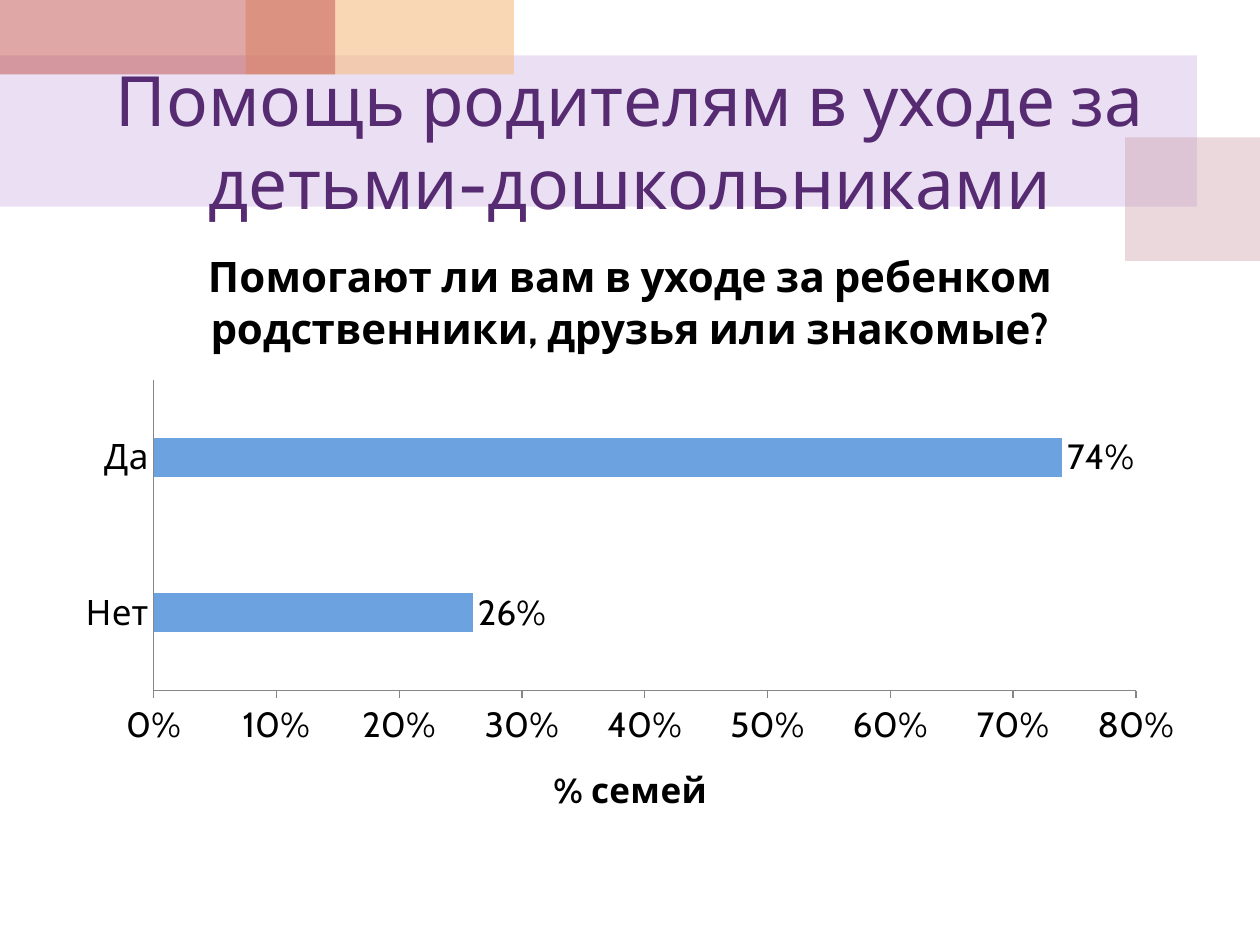
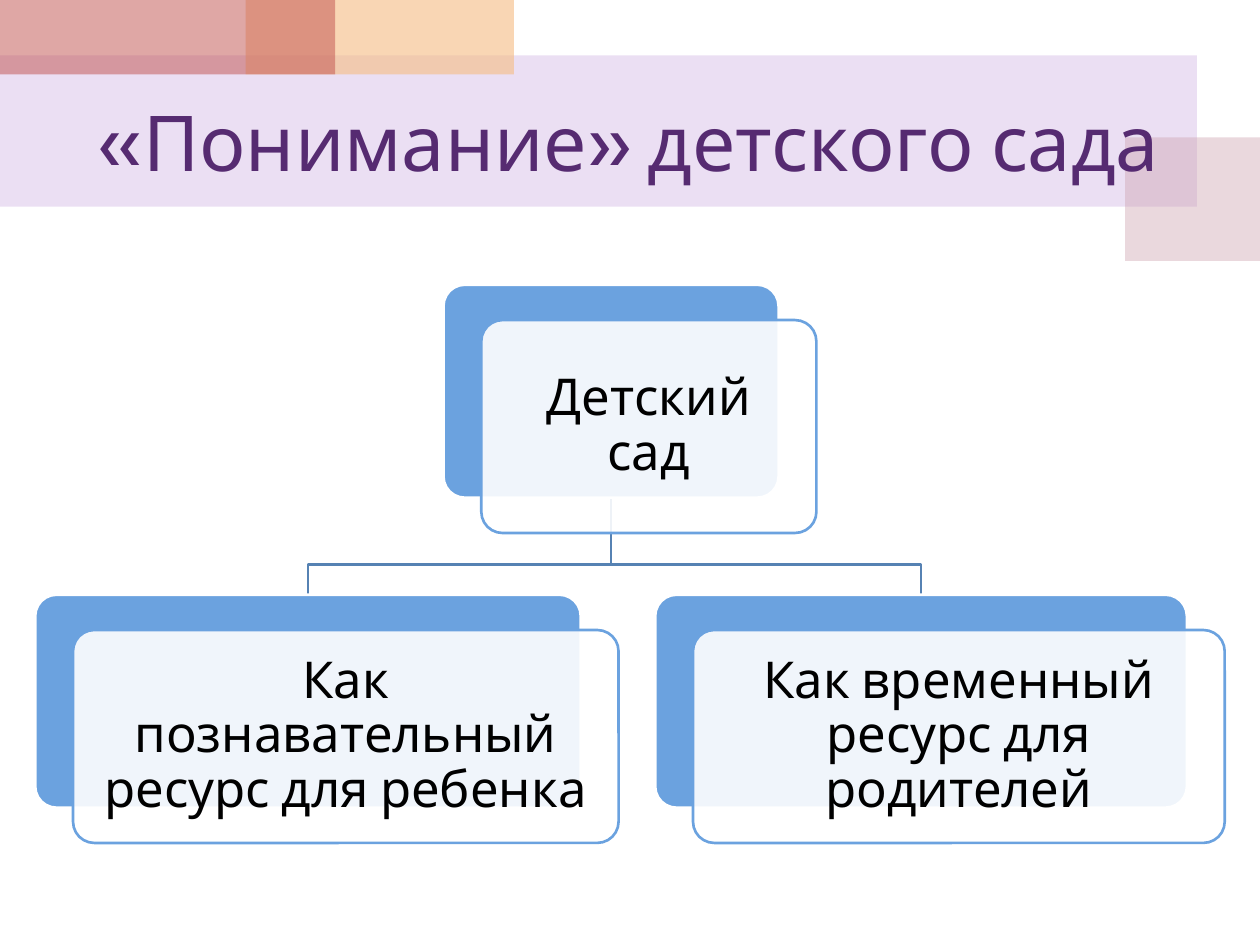
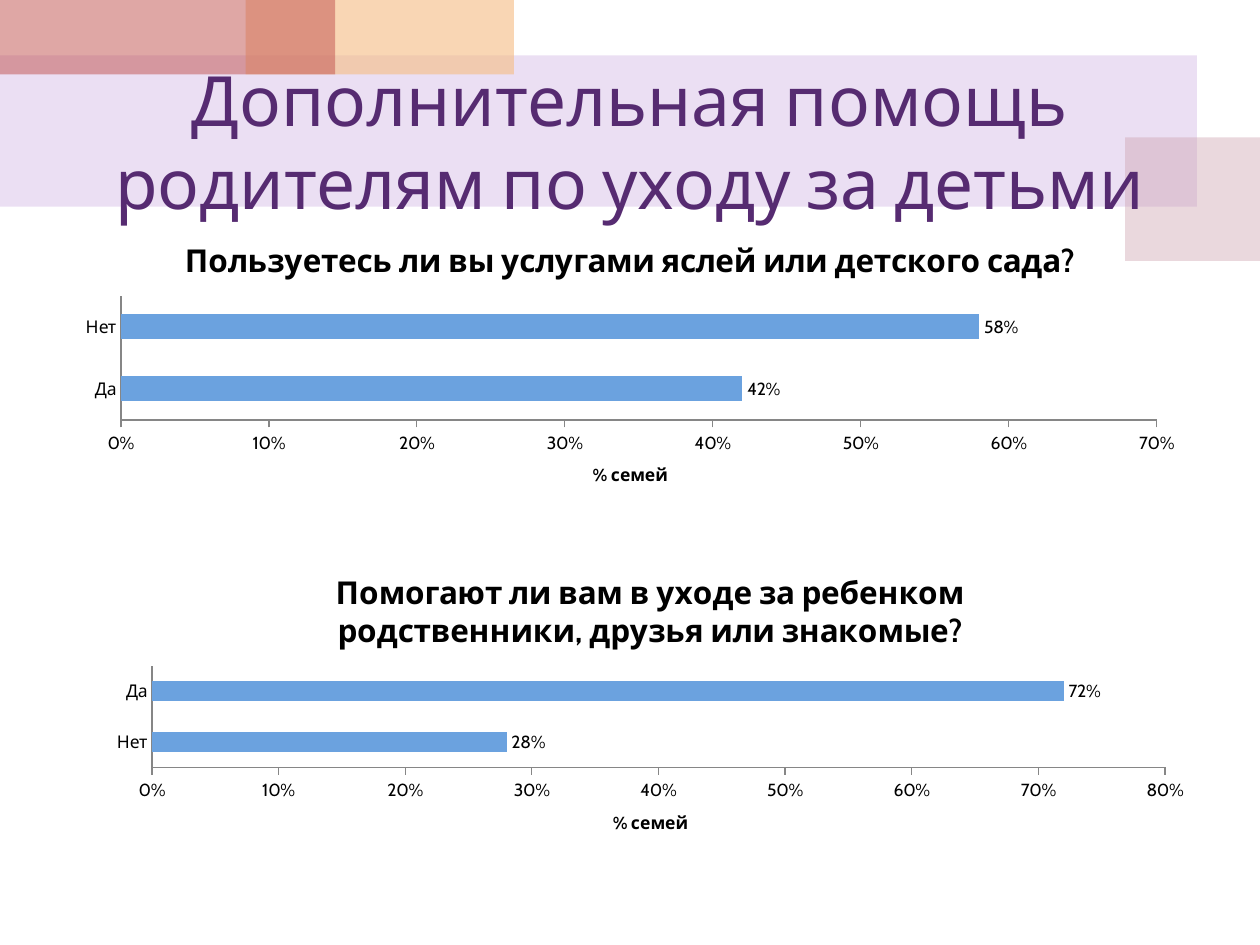
from dataclasses import dataclass

from lxml import etree
from pptx import Presentation, util as u
from pptx.chart.data import CategoryChartData
from pptx.dml.color import RGBColor
from pptx.enum import chart as ch, shapes, text
from pptx.oxml.ns import qn


@dataclass(frozen=True)
class Theme:
    font: str = "Cabin"
    title: str = "562B71"
    ink: str = "000000"
    white: str = "FFFFFF"
    blue: str = "6BA2DF"
    link: str = "5682B3"
    axis: str = "868686"
    lilac: str = "BF98D8"
    rose: str = "CC9EAC"
    peach: str = "F5BC83"
    red: str = "C0504D"
    title_pt: float = 44
    long_title_pt: float = 39.6
    node_pt: float = 29
    line_pt: float = 1.5


T = Theme()


def add_box(s, kind, at, fill, alpha=100, line=None):
    """Add a filled shape; alpha is its opacity in percent."""
    sp = s.shapes.add_shape(kind, *map(u.Inches, at))
    sp.shadow.inherit = False
    sp.fill.solid()
    sp.fill.fore_color.rgb = RGBColor.from_string(fill)
    if alpha < 100:
        clr = sp._element.spPr.find(qn("a:solidFill"))[0]
        etree.SubElement(clr, qn("a:alpha"), val=str(alpha * 1000))
    if line:
        sp.line.color.rgb = RGBColor.from_string(line)
        sp.line.width = u.Pt(T.line_pt)
    else:
        sp.line.fill.background()
    return sp


def write(tf, words, size, color=T.ink, bold=False):
    tf.word_wrap = True
    p = tf.paragraphs[0]
    p.alignment = text.PP_ALIGN.CENTER
    r = p.add_run()
    r.text = words
    for name, value in {"name": T.font, "size": u.Pt(size), "bold": bold}.items():
        setattr(r.font, name, value)
    r.font.color.rgb = RGBColor.from_string(color)
    return p


prs = Presentation()
prs.slide_width, prs.slide_height = u.Inches(10), u.Inches(7.5)

# Bands and titles shared by every slide
bands = [
    ((0, 0.44, 9.5, 1.2), T.lilac, 30),
    ((8.93, 1.09, 1.07, 0.98), T.rose, 40),
    ((1.95, 0, 2.13, 0.59), T.peach, 60),
    ((0, 0, 2.66, 0.59), T.red, 50),
]
titles = [
    ("Помощь родителям в уходе за детьми-дошкольниками", T.long_title_pt),
    ("«Понимание» детского сада", T.title_pt),
    ("Дополнительная помощь родителям по уходу за детьми", T.long_title_pt),
]
for words, size in titles:
    s = prs.slides.add_slide(prs.slide_layouts[6])
    for at, fill, alpha in bands:
        add_box(s, shapes.MSO_SHAPE.RECTANGLE, at, fill, alpha)
    tf = s.shapes.add_textbox(*map(u.Inches, (0.5, 0.59, 9, 1.05))).text_frame
    tf.vertical_anchor = text.MSO_ANCHOR.MIDDLE
    write(tf, words, size, T.title)

help_slide, tree_slide, extra_slide = prs.slides

# Tree: one root, two readings of the kindergarten
node_h, offset_x, offset_y = 1.69, 0.3, 0.28
root_y, child_y, bend_y = 2.26, 4.72, 4.48
nodes = [
    ("Детский сад", 3.52, root_y, 2.66),
    ("Как познавательный ресурс для ребенка", 0.28, child_y, 4.33),
    ("Как временный ресурс для родителей", 5.2, child_y, 4.22),
]
root_x, *child_xs = [left + w / 2 for _, left, _, w in nodes]
for child_x in child_xs:
    fb = tree_slide.shapes.build_freeform(
        u.Inches(root_x), u.Inches(root_y + node_h))
    bends = [(root_x, bend_y), (child_x, bend_y), (child_x, child_y)]
    fb.add_line_segments(
        [(u.Inches(x), u.Inches(y)) for x, y in bends], close=False)
    sp = fb.convert_to_shape()
    sp.shadow.inherit = False
    sp.fill.background()
    sp.line.color.rgb = RGBColor.from_string(T.link)
    sp.line.width = u.Pt(T.line_pt)

for words, left, top, w in nodes:
    back = add_box(tree_slide, shapes.MSO_SHAPE.ROUNDED_RECTANGLE,
                   (left, top, w, node_h), T.blue, line=T.white)
    front = add_box(tree_slide, shapes.MSO_SHAPE.ROUNDED_RECTANGLE,
                    (left + offset_x, top + offset_y, w, node_h),
                    T.white, 90, T.blue)
    for sp in (back, front):
        sp.adjustments[0] = 0.1
    tf = front.text_frame
    tf.vertical_anchor = text.MSO_ANCHOR.MIDDLE
    for side in ("left", "top", "right", "bottom"):
        setattr(tf, f"margin_{side}", u.Inches(0.12))
    write(tf, words, T.node_pt).line_spacing = 0.9

# Bar charts: slide, place, title, answers from the bottom up, maximum, gap, sizes
help_question = "Помогают ли вам в уходе за ребенком родственники, друзья или знакомые?"
nursery_question = "Пользуетесь ли вы услугами яслей или детского сада?"
charts = [
    (help_slide, (0.5, 1.75, 9, 4.95), help_question,
     {"Нет": 0.26, "Да": 0.74}, 0.8, 300, 24, 20),
    (extra_slide, (0.5, 1.75, 9, 2.31), nursery_question,
     {"Да": 0.42, "Нет": 0.58}, 0.7, 150, 18, 10),
    (extra_slide, (0.75, 4.38, 8.82, 2.44), help_question,
     {"Нет": 0.28, "Да": 0.72}, 0.8, 150, 18, 10),
]
for s, at, question, answers, top_value, gap, title_pt, text_pt in charts:
    data = CategoryChartData(number_format="0%")
    data.categories = list(answers)
    data.add_series("Series 1", list(answers.values()))
    chart = s.shapes.add_chart(
        ch.XL_CHART_TYPE.BAR_CLUSTERED, *map(u.Inches, at), data).chart
    chart.has_legend = False
    chart.font.name = T.font
    chart.font.size = u.Pt(text_pt)
    chart.font.color.rgb = RGBColor.from_string(T.ink)
    write(chart.chart_title.text_frame, question, title_pt, bold=True)
    chart.chart_title.include_in_layout = False

    cat, val = chart.category_axis, chart.value_axis
    axis_format = {
        cat: {"major_tick_mark": ch.XL_TICK_MARK.NONE},
        val: {"major_tick_mark": ch.XL_TICK_MARK.OUTSIDE,
              "minimum_scale": 0, "maximum_scale": top_value, "major_unit": 0.1},
    }
    for axis, fmt in axis_format.items():
        fmt["has_major_gridlines"] = False
        for name, value in fmt.items():
            setattr(axis, name, value)
        axis.format.line.color.rgb = RGBColor.from_string(T.axis)
        axis.format.line.width = u.Pt(0.75)
    val.tick_labels.number_format = "0%"
    val.tick_labels.number_format_is_linked = False
    write(val.axis_title.text_frame, "% семей", text_pt, bold=True)

    plot = chart.plots[0]
    plot.gap_width = gap
    plot.vary_by_categories = False
    bars = plot.series[0].format.fill
    bars.solid()
    bars.fore_color.rgb = RGBColor.from_string(T.blue)
    plot.has_data_labels = True
    label_format = {
        "show_value": True,
        "number_format": "0%",
        "number_format_is_linked": False,
        "position": ch.XL_LABEL_POSITION.OUTSIDE_END,
    }
    for name, value in label_format.items():
        setattr(plot.data_labels, name, value)

prs.save("out.pptx")
